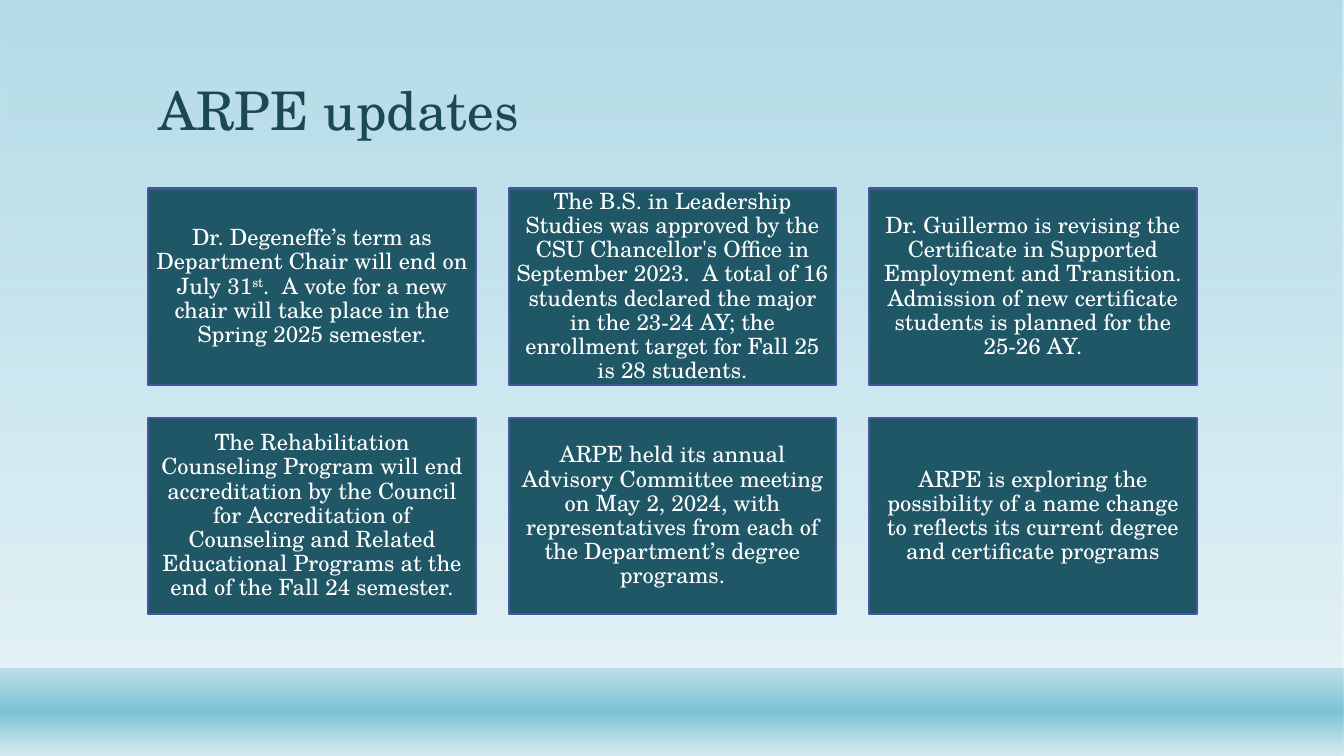
from dataclasses import dataclass

from lxml import etree
from pptx import Presentation
from pptx.dml.color import RGBColor
from pptx.enum.shapes import MSO_SHAPE
from pptx.enum.text import MSO_ANCHOR, PP_ALIGN
from pptx.oxml.ns import qn
from pptx.util import Inches, Pt

RECTANGLE = MSO_SHAPE.RECTANGLE
BOTTOM, MIDDLE = MSO_ANCHOR.BOTTOM, MSO_ANCHOR.MIDDLE
LEFT, CENTER = PP_ALIGN.LEFT, PP_ALIGN.CENTER

FONT = "TeX Gyre Schola"
COLORS = {
    "sea": "7DC2D6",
    "mist": "D4EBF1",
    "title": "1B4855",
    "card": "205766",
    "border": "4557A1",
    "card_text": "FFFFFF",
}

PAGE_WIDTH, PAGE_HEIGHT = 13.33, 7.5
MARGIN = 1.47
CONTENT_WIDTH = 10.4
COLUMNS = 3
GAP_SHARE = 0.1
CARD_WIDTH = CONTENT_WIDTH / (COLUMNS + (COLUMNS - 1) * GAP_SHARE)
CARD_HEIGHT = 0.6 * CARD_WIDTH
GAP = GAP_SHARE * CARD_WIDTH
GRID_TOP = 1.87


@dataclass(frozen=True)
class Span:
    text: str
    superscript: bool = False


@dataclass(frozen=True)
class Stop:
    position: int
    color: str
    opacity: int


@dataclass(frozen=True)
class Band:
    top: float
    height: float
    stops: tuple[Stop, ...]


BANDS = (
    Band(0, PAGE_HEIGHT, (Stop(0, "sea", 58), Stop(88, "mist", 65))),
    Band(6.63, 0.87, (Stop(1, "sea", 38), Stop(49, "sea", 100), Stop(100, "mist", 89))),
)

UPDATES = (
    (
        Span("Dr. Degeneffe’s term as Department Chair will end on July 31"),
        Span("st", superscript=True),
        Span(".  A vote for a new chair will take place in the Spring 2025 semester."),
    ),
    (Span("The B.S. in Leadership Studies was approved by the CSU Chancellor's Office in "
          "September 2023.  A total of 16 students declared the major in the 23-24 AY; "
          "the enrollment target for Fall 25 is 28 students."),),
    (Span("Dr. Guillermo is revising the Certificate in Supported Employment and "
          "Transition. Admission of new certificate students is planned for the 25-26 AY."),),
    (Span("The Rehabilitation Counseling Program will end accreditation by the Council for "
          "Accreditation of Counseling and Related Educational Programs at the end of the "
          "Fall 24 semester."),),
    (Span("ARPE held its annual Advisory Committee meeting on May 2, 2024, with "
          "representatives from each of the Department’s degree programs."),),
    (Span("ARPE is exploring the possibility of a name change to reflects its current "
          "degree and certificate programs"),),
)


def add_rectangle(page, left: float, top: float, width: float, height: float):
    box = page.shapes.add_shape(
        RECTANGLE, Inches(left), Inches(top), Inches(width), Inches(height)
    )
    box.shadow.inherit = False
    return box


def write_text(box, spans: tuple[Span, ...], *, size: float, color: str,
               align=LEFT, anchor=MIDDLE, inset: float = 0.1) -> None:
    frame = box.text_frame
    frame.word_wrap = True
    frame.vertical_anchor = anchor
    frame.margin_left = frame.margin_right = Inches(inset)
    frame.margin_top = frame.margin_bottom = Inches(min(inset, 0.07))
    para = frame.paragraphs[0]
    para.alignment = align
    para.line_spacing = 0.9
    for span in spans:
        run = para.add_run()
        run.text = span.text
        run.font.name = FONT
        run.font.size = Pt(size)
        run.font.color.rgb = RGBColor.from_string(COLORS[color])
        if span.superscript:
            run.font._element.set("baseline", "30000")


def add_band(page, band: Band) -> None:
    box = add_rectangle(page, 0, band.top, PAGE_WIDTH, band.height)
    box.line.fill.background()
    box.fill.gradient()
    box.fill.gradient_angle = 270
    stop_list = box._element.spPr.find(".//" + qn("a:gsLst"))
    for default_stop in list(stop_list):
        stop_list.remove(default_stop)
    for stop in band.stops:
        entry = etree.SubElement(stop_list, qn("a:gs"), pos=str(stop.position * 1000))
        color = etree.SubElement(entry, qn("a:srgbClr"), val=COLORS[stop.color])
        etree.SubElement(color, qn("a:alpha"), val=str(stop.opacity * 1000))


def add_title(page, text: str) -> None:
    box = page.shapes.add_textbox(
        Inches(MARGIN), Inches(0.29), Inches(CONTENT_WIDTH), Inches(1.19)
    )
    write_text(box, (Span(text),), size=38, color="title", anchor=BOTTOM)


def add_card(page, index: int, spans: tuple[Span, ...]) -> None:
    row, column = divmod(index, COLUMNS)
    left = MARGIN + column * (CARD_WIDTH + GAP)
    top = GRID_TOP + row * (CARD_HEIGHT + GAP)
    box = add_rectangle(page, left, top, CARD_WIDTH, CARD_HEIGHT)
    box.fill.solid()
    box.fill.fore_color.rgb = RGBColor.from_string(COLORS["card"])
    box.line.color.rgb = RGBColor.from_string(COLORS["border"])
    box.line.width = Pt(1.5)
    write_text(box, spans, size=16, color="card_text", align=CENTER, inset=0.07)


def main() -> None:
    deck = Presentation()
    deck.slide_width = Inches(PAGE_WIDTH)
    deck.slide_height = Inches(PAGE_HEIGHT)
    page = deck.slides.add_slide(deck.slide_layouts[6])
    for band in BANDS:
        add_band(page, band)
    add_title(page, "ARPE updates")
    for index, spans in enumerate(UPDATES):
        add_card(page, index, spans)
    deck.save("out.pptx")


if __name__ == "__main__":
    main()
